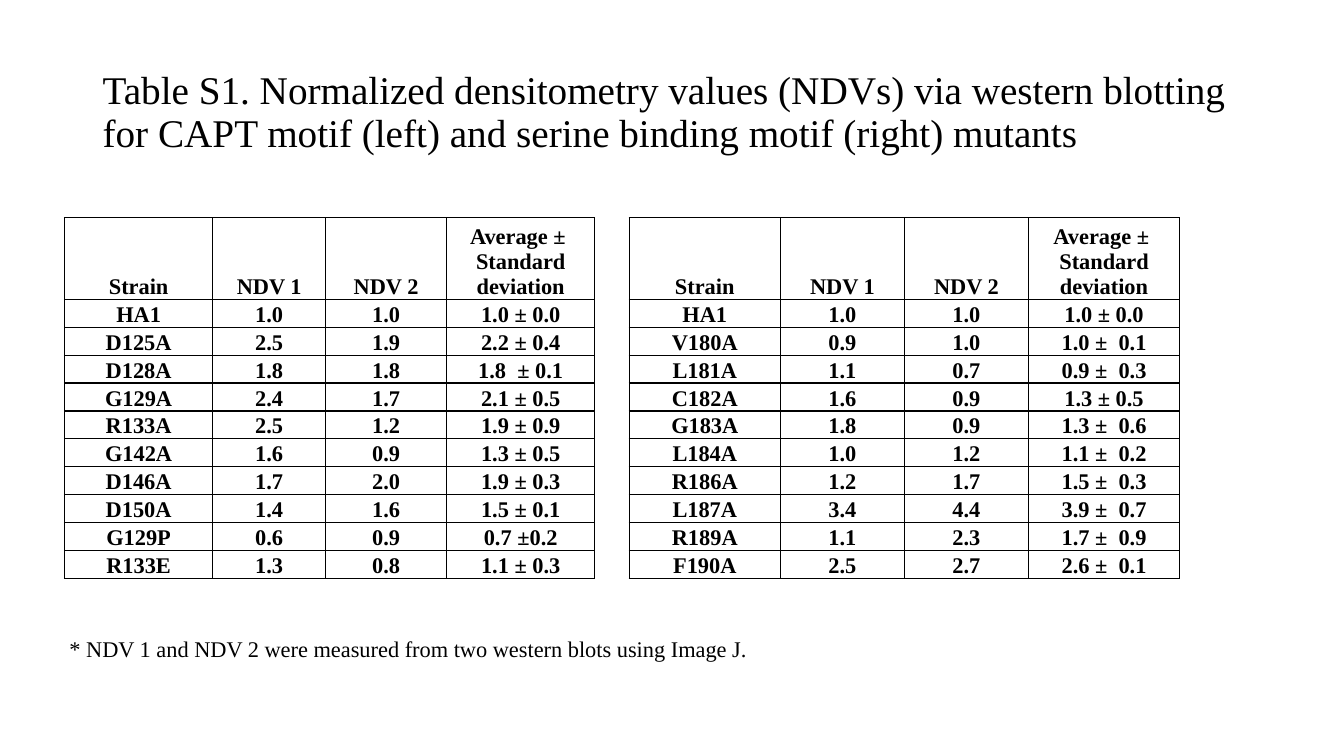
from dataclasses import dataclass

from lxml import etree
from pptx import Presentation
from pptx.dml.color import RGBColor
from pptx.enum import text
from pptx.oxml import ns
from pptx.util import Inches, Pt


@dataclass(frozen=True)
class Theme:
    font: str = "Times New Roman"
    ink: str = "000000"
    title_size: int = 28
    body_size: int = 16
    border_width: int = 1


theme = Theme()


def add_run(paragraph, wording, size, bold=False):
    run = paragraph.add_run()
    run.text = wording
    run.font.name = theme.font
    run.font.size = Pt(size)
    run.font.bold = bold
    run.font.color.rgb = RGBColor.from_string(theme.ink)


def add_borders(cell):
    properties = cell._tc.get_or_add_tcPr()
    for position, side in enumerate(("a:lnL", "a:lnR", "a:lnT", "a:lnB")):
        line = etree.Element(ns.qn(side), w=str(Pt(theme.border_width)))
        fill = etree.SubElement(line, ns.qn("a:solidFill"))
        etree.SubElement(fill, ns.qn("a:srgbClr"), val=theme.ink)
        properties.insert(position, line)


presentation = Presentation()
presentation.slide_width = Inches(13.33)
presentation.slide_height = Inches(7.5)
slide = presentation.slides.add_slide(presentation.slide_layouts[6])

# Title and footnote
captions = [
    ("Table S1. Normalized densitometry values (NDVs) via western blotting "
     "for CAPT motif (left) and serine binding motif (right) mutants",
     (0.92, 0.4, 11.5, 1.45), theme.title_size, text.MSO_ANCHOR.MIDDLE, 0.9),
    ("* NDV 1 and NDV 2 were measured from two western blots using Image J.",
     (0.59, 6.25, 10.65, 0.64), theme.body_size, text.MSO_ANCHOR.TOP, 1.0),
]
for wording, place, size, anchor, spacing in captions:
    frame = slide.shapes.add_textbox(*map(Inches, place)).text_frame
    frame.word_wrap = True
    frame.vertical_anchor = anchor
    frame.paragraphs[0].line_spacing = spacing
    add_run(frame.paragraphs[0], wording, size)

# Densitometry values of both motifs
header = ("Strain", "NDV 1", "NDV 2", "Average ±  Standard deviation")
capt_motif = [
    ("HA1", "1.0", "1.0", "1.0 ± 0.0"),
    ("D125A", "2.5", "1.9", "2.2 ± 0.4"),
    ("D128A", "1.8", "1.8", "1.8  ± 0.1"),
    ("G129A", "2.4", "1.7", "2.1 ± 0.5"),
    ("R133A", "2.5", "1.2", "1.9 ± 0.9"),
    ("G142A", "1.6", "0.9", "1.3 ± 0.5"),
    ("D146A", "1.7", "2.0", "1.9 ± 0.3"),
    ("D150A", "1.4", "1.6", "1.5 ± 0.1"),
    ("G129P", "0.6", "0.9", "0.7 ±0.2"),
    ("R133E", "1.3", "0.8", "1.1 ± 0.3"),
]
serine_motif = [
    ("HA1", "1.0", "1.0", "1.0 ± 0.0"),
    ("V180A", "0.9", "1.0", "1.0 ±  0.1"),
    ("L181A", "1.1", "0.7", "0.9 ±  0.3"),
    ("C182A", "1.6", "0.9", "1.3 ± 0.5"),
    ("G183A", "1.8", "0.9", "1.3 ±  0.6"),
    ("L184A", "1.0", "1.2", "1.1 ±  0.2"),
    ("R186A", "1.2", "1.7", "1.5 ±  0.3"),
    ("L187A", "3.4", "4.4", "3.9 ±  0.7"),
    ("R189A", "1.1", "2.3", "1.7 ±  0.9"),
    ("F190A", "2.5", "2.7", "2.6 ±  0.1"),
]
tables = [
    (0.64, (1.47, 1.12, 1.2, 1.47), capt_motif),
    (6.24, (1.5, 1.23, 1.23, 1.5), serine_motif),
]
header_height, row_height = 0.74, 0.25

# Side-by-side tables
for left, widths, strains in tables:
    rows = [header] + strains
    height = header_height + row_height * len(strains)
    table = slide.shapes.add_table(
        len(rows), len(header), Inches(left), Inches(2.16),
        Inches(sum(widths)), Inches(height)).table
    table.first_row = table.horz_banding = False
    for column, width in zip(table.columns, widths):
        column.width = Inches(width)
    for index, values in enumerate(rows):
        table.rows[index].height = Inches(row_height if index else header_height)
        for cell, value in zip(table.rows[index].cells, values):
            cell.fill.background()
            cell.vertical_anchor = text.MSO_ANCHOR.BOTTOM
            cell.margin_left = cell.margin_right = cell.margin_top = Inches(0.01)
            cell.margin_bottom = 0
            add_borders(cell)
            paragraph = cell.text_frame.paragraphs[0]
            paragraph.alignment = text.PP_ALIGN.CENTER
            add_run(paragraph, value, theme.body_size, bold=True)

presentation.save("out.pptx")
